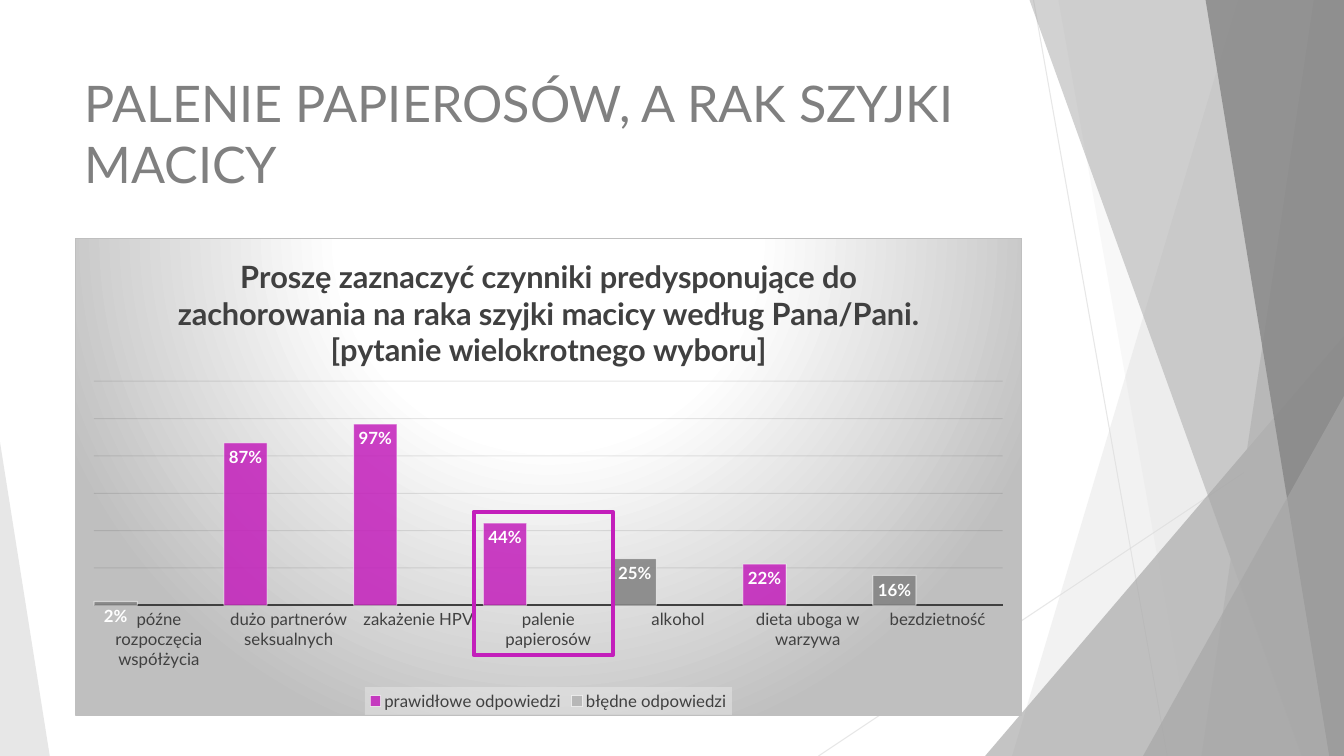
from lxml import etree
from pptx import Presentation
from pptx import util as u
from pptx.chart.data import CategoryChartData
from pptx.dml.color import RGBColor
from pptx.enum import chart as charts, shapes, text
from pptx.oxml import parse_xml
from pptx.oxml.ns import nsdecls, qn

WIDTH, HEIGHT = u.Inches(13.33), u.Inches(7.5)
FONT = "Lato"
COLORS = {
    "title": "808080", "dark": "404040", "accent": "C31FBB", "wrong": "808080",
    "wrong_key": "B2B2B2", "spare": "969696", "white": "FFFFFF", "border": "BFBFBF",
    "grid": "0D0D0D", "legend": "F2F2F2",
    "pale": "DDDDDD", "mid": "A6A6A6", "silver": "B2B2B2", "deep": "858585",
}

# Survey answers
HEADING = "PALENIE PAPIEROSÓW, A RAK SZYJKI MACICY"
QUESTION = ["Proszę zaznaczyć czynniki predysponujące do zachorowania na raka "
            "szyjki macicy według Pana/Pani.", "[pytanie wielokrotnego wyboru]"]
ANSWERS = {
    "późne rozpoczęcia współżycia": 0.02, "dużo partnerów seksualnych": 0.87,
    "zakażenie HPV": 0.97, "palenie papierosów": 0.44, "alkohol": 0.25,
    "dieta uboga w warzywa": 0.22, "bezdzietność": 0.16,
}
WRONG_ANSWERS = (0, 4, 6)
SERIES = {"prawidłowe odpowiedzi": "accent", "błędne odpowiedzi": "wrong_key",
          "Series 3": "spare"}


def across(percent):
    return int(WIDTH * percent / 100)


def down(percent):
    return int(HEIGHT * percent / 100)


def frame(left, top, width, height):
    """Turn shares of the slide, in percent, into a position and a size."""
    return across(left), down(top), across(width), down(height)


def rgb(name):
    return RGBColor.from_string(COLORS[name])


def set_alpha(color_holder, percent):
    for color in color_holder.iter(qn("a:srgbClr")):
        etree.SubElement(color, qn("a:alpha")).set("val", str(percent * 1000))


def paint(shape, color, alpha):
    shape.shadow.inherit = False
    shape.fill.solid()
    shape.fill.fore_color.rgb = rgb(color)
    set_alpha(shape.fill._xPr, alpha)
    shape.line.fill.background()


def style_font(font, size, color, bold=False):
    font.name, font.size, font.bold = FONT, u.Pt(size), bold
    font.color.rgb = rgb(color)


def add_thin_line(page, start, end):
    line = page.shapes.add_connector(
        shapes.MSO_CONNECTOR.STRAIGHT,
        across(start[0]), down(start[1]), across(end[0]), down(end[1]))
    line.line.width = u.Pt(0.75)
    line.line.color.rgb = rgb("pale")
    properties = line._element.spPr
    set_alpha(properties, 70)
    etree.SubElement(properties, qn("a:effectLst"))


def add_panel(page, top_x, bottom_x, color, alpha):
    """A full-height panel between a slanted left side and the right slide edge."""
    builder = page.shapes.build_freeform(across(top_x), 0)
    builder.add_line_segments([(WIDTH, 0), (WIDTH, HEIGHT), (across(bottom_x), HEIGHT)])
    paint(builder.convert_to_shape(), color, alpha)


def add_corner(page, left, top, width, tip, color, alpha):
    """A right triangle standing on the bottom edge; tip 0 is left, 1 is right."""
    corner = page.shapes.add_shape(shapes.MSO_SHAPE.ISOSCELES_TRIANGLE,
                                   *frame(left, top, width, 100 - top))
    corner.adjustments[0] = tip
    paint(corner, color, alpha)


def add_backdrop(page):
    add_thin_line(page, (76.9, 0), (86.85, 100))
    add_thin_line(page, (100, 53.7), (60.9, 100))
    add_panel(page, 92.1, 75.3, "pale", 36)
    add_panel(page, 78.75, 88.75, "pale", 20)
    add_corner(page, 73.3, 44.4, 26.7, 1, "mid", 66)
    add_panel(page, 76.6, 96.85, "mid", 50)
    add_panel(page, 97.75, 89.4, "silver", 70)
    add_panel(page, 89.7, 98.9, "deep", 80)
    add_corner(page, 85.05, 52.4, 14.95, 1, "mid", 66)
    add_corner(page, 0, 58.5, 3.7, 0, "pale", 70)


def add_heading(page):
    box = page.shapes.add_textbox(*frame(5.55, 8.95, 70.5, 19.2))
    box.text_frame.word_wrap = True
    box.text_frame.vertical_anchor = text.MSO_ANCHOR.TOP
    box.text_frame.text = HEADING
    style_font(box.text_frame.paragraphs[0].runs[0].font, 36, "title")


def fill_bar(bar_format, color):
    bar_format.fill.solid()
    bar_format.fill.fore_color.rgb = rgb(color)
    bar_format.line.width = u.Pt(0.75)
    bar_format.line.color.rgb = rgb("white")
    set_alpha(bar_format.fill._xPr.find(qn("a:solidFill")), 85)
    set_alpha(bar_format.line._ln, 50)


def style_series(plot):
    for series, color in zip(plot.series, SERIES.values()):
        series.invert_if_negative = False
        fill_bar(series.format, color)
        labels = series.data_labels
        labels.show_value = True
        labels.position = charts.XL_LABEL_POSITION.INSIDE_END
        labels.number_format, labels.number_format_is_linked = "0%", False
        style_font(labels.font, 12, "white", bold=True)
    for index in WRONG_ANSWERS:
        fill_bar(plot.series[0].points[index].format, "wrong")


def style_axes(chart):
    categories, values = chart.category_axis, chart.value_axis
    categories.major_tick_mark = charts.XL_TICK_MARK.NONE
    categories.format.line.width = u.Pt(1.5)
    categories.format.line.color.rgb = rgb("dark")
    style_font(categories.tick_labels.font, 12, "dark")
    values.visible = False
    values.minimum_scale, values.maximum_scale, values.major_unit = 0, 1.2, 0.2
    grid = values.major_gridlines.format.line
    grid.width = u.Pt(0.75)
    grid.color.rgb = rgb("grid")
    set_alpha(grid._ln, 10)


def style_legend(chart):
    chart.has_legend = True
    legend = chart.legend
    legend.position = charts.XL_LEGEND_POSITION.BOTTOM
    legend.include_in_layout = False
    style_font(legend.font, 12, "dark")
    # Leave the empty third series out of the key
    legend._element.find(qn("c:legendPos")).addnext(parse_xml(
        f'<c:legendEntry {nsdecls("c")}><c:idx val="2"/><c:delete val="1"/></c:legendEntry>'))
    legend._element.find(qn("c:txPr")).addprevious(parse_xml(
        f'<c:spPr {nsdecls("c", "a")}><a:solidFill><a:srgbClr val="{COLORS["legend"]}">'
        '<a:alpha val="39000"/></a:srgbClr></a:solidFill></c:spPr>'))


def style_question(chart):
    chart.has_title = True
    title = chart.chart_title
    title.include_in_layout = False
    title.text_frame.text = "\n".join(QUESTION)
    for para in title.text_frame.paragraphs:
        for span in para.runs:
            style_font(span.font, 22, "dark", bold=True)


def style_chart_area(chart):
    stops = "".join(f'<a:gs pos="{share * 1000}"><a:srgbClr val="{COLORS[name]}"/></a:gs>'
                    for share, name in ((0, "white"), (39, "white"), (100, "border")))
    area = parse_xml(
        f'<c:spPr {nsdecls("c", "a")}><a:gradFill><a:gsLst>{stops}</a:gsLst>'
        '<a:path path="circle"><a:fillToRect l="50000" t="-80000" r="50000" b="180000"/>'
        '</a:path></a:gradFill><a:ln w="9525"><a:solidFill>'
        f'<a:srgbClr val="{COLORS["border"]}"/></a:solidFill></a:ln></c:spPr>')
    chart._chartSpace.chart.addnext(area)
    # Inner plot area as shares of the chart
    edges = {"x": 0.02, "y": 0.3, "w": 0.96, "h": 0.47}
    layout = "".join(f'<c:{key} val="{share}"/>' for key, share in edges.items())
    plot_area = chart._chartSpace.chart.plotArea
    for former in plot_area.findall(qn("c:layout")):
        plot_area.remove(former)
    plot_area.insert(0, parse_xml(
        f'<c:layout {nsdecls("c")}><c:manualLayout><c:layoutTarget val="inner"/>'
        f'<c:xMode val="edge"/><c:yMode val="edge"/>{layout}</c:manualLayout></c:layout>'))


def add_answer_chart(page):
    data = CategoryChartData(number_format="0%")
    data.categories = list(ANSWERS)
    for index, name in enumerate(SERIES):
        data.add_series(name, [None if index else share for share in ANSWERS.values()])
    chart = page.shapes.add_chart(charts.XL_CHART_TYPE.COLUMN_CLUSTERED,
                                  *frame(5.55, 31.45, 70.5, 63.2), data).chart
    chart.font.name, chart.font.size = FONT, u.Pt(10)
    plot = chart.plots[0]
    plot.vary_by_categories = False
    plot.gap_width, plot.overlap = 0, 0
    style_series(plot)
    style_axes(chart)
    style_legend(chart)
    style_question(chart)
    style_chart_area(chart)


def add_highlight(page):
    highlight = page.shapes.add_shape(shapes.MSO_SHAPE.RECTANGLE,
                                      *frame(35.25, 67.7, 10.35, 18.95))
    highlight.shadow.inherit = False
    highlight.fill.background()
    highlight.line.width = u.Pt(3)
    highlight.line.color.rgb = rgb("accent")


def main():
    deck = Presentation()
    deck.slide_width, deck.slide_height = WIDTH, HEIGHT
    page = deck.slides.add_slide(deck.slide_layouts[6])
    add_backdrop(page)
    add_heading(page)
    add_answer_chart(page)
    add_highlight(page)
    deck.save("out.pptx")


if __name__ == "__main__":
    main()
